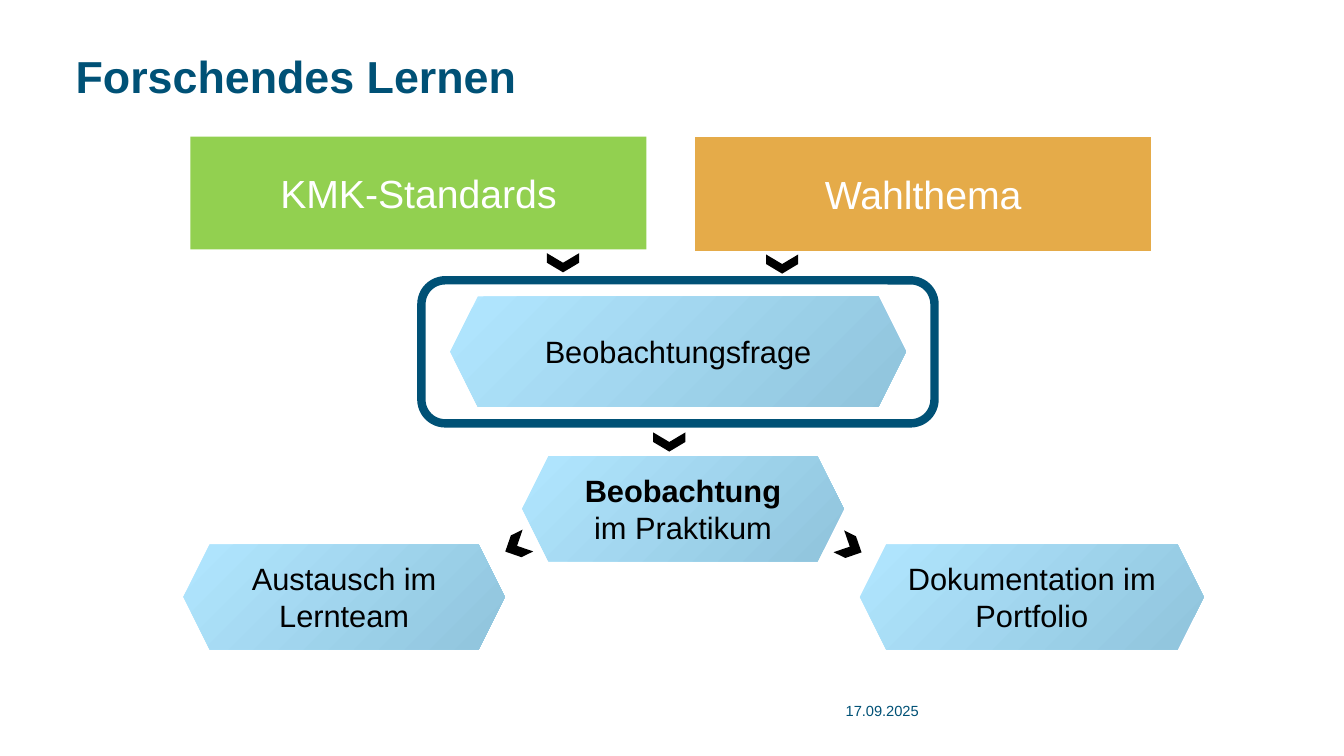
from dataclasses import dataclass

import pptx
import pptx.dml.color
import pptx.enum.shapes
import pptx.enum.text
import pptx.util

Pt = pptx.util.Pt
RGB = pptx.dml.color.RGBColor
Kind = pptx.enum.shapes.MSO_SHAPE
Align = pptx.enum.text.PP_ALIGN
Anchor = pptx.enum.text.MSO_ANCHOR

NAVY = RGB(0x00, 0x51, 0x76)
GREEN = RGB(0x92, 0xD0, 0x50)
AMBER = RGB(0xE5, 0xAB, 0x49)
LIGHT = RGB(0xB1, 0xE6, 0xFF)
STEEL = RGB(0x90, 0xC4, 0xDC)
BLACK = RGB(0, 0, 0)
WHITE = RGB(255, 255, 255)


@dataclass
class Box:
    left: float
    top: float
    width: float
    height: float


@dataclass
class Label:
    box: Box
    text: str
    size: float
    anchor: Anchor
    bold: bool = False
    space: float = 1.0


@dataclass
class Topic:
    box: Box
    text: str
    color: RGB


@dataclass
class Step:
    box: Box
    text: str
    lead: str = ""


@dataclass
class Arrow:
    box: Box
    turn: float


LABELS = [
    Label(Box(54, 38.9, 862.6, 45.4), "Forschendes Lernen", 32, Anchor.TOP, True, 0.9),
    Label(Box(604.1, 498.2, 96.5, 19.4), "17.09.2025", 10.5, Anchor.MIDDLE),
]
TOPICS = [
    Topic(Box(136.1, 97.5, 325.6, 80.6), "KMK-Standards", GREEN),
    Topic(Box(496.6, 98, 325.6, 81.2), "Wahlthema", AMBER),
]
STEPS = [
    Step(Box(321.6, 211.8, 325.6, 78.8), "Beobachtungsfrage"),
    Step(Box(373, 325.8, 229.7, 75.2), " im Praktikum", "Beobachtung"),
    Step(Box(614.3, 388.8, 245.6, 75.2), "Dokumentation im Portfolio"),
    Step(Box(131, 388.8, 229.7, 75.2), "Austausch im Lernteam"),
]
ARROWS = [
    Arrow(Box(471.2, 304.2, 13.7, 23), 90),
    Arrow(Box(551.8, 177.1, 13.7, 23), 90),
    Arrow(Box(395.3, 176.2, 13.7, 23), 90),
    Arrow(Box(360, 381.4, 18, 17.3), 154),
    Arrow(Box(598.3, 382, 18, 17.3), 26),
]
FRAME = Box(301, 200.2, 366.5, 102.2)


def place(box: Box) -> list:
    return [Pt(n) for n in (box.left, box.top, box.width, box.height)]


def style(item, form: dict) -> None:
    for name, value in form.items():
        setattr(item, name, value)


def write(para, text: str, size: float, color: RGB, bold: bool = False) -> None:
    run = para.add_run()
    run.text = text
    style(run.font, {"name": "Arial", "size": Pt(size), "bold": bold})
    run.font.color.rgb = color


def shape(slide, kind: Kind, box: Box):
    item = slide.shapes.add_shape(kind, *place(box))
    item.shadow.inherit = False
    item.line.fill.background()
    style(item.text_frame, {"word_wrap": True, "vertical_anchor": Anchor.MIDDLE})
    item.text_frame.paragraphs[0].alignment = Align.CENTER
    return item


def paint(item, color: RGB) -> None:
    item.fill.solid()
    item.fill.fore_color.rgb = color


def label(slide, part: Label) -> None:
    frame = slide.shapes.add_textbox(*place(part.box)).text_frame
    sides = ("left", "top", "right", "bottom")
    style(frame, {f"margin_{side}": 0 for side in sides})
    style(frame, {"word_wrap": True, "vertical_anchor": part.anchor})
    para = frame.paragraphs[0]
    para.line_spacing = part.space
    write(para, part.text, part.size, NAVY, part.bold)


def topic(slide, part: Topic) -> None:
    item = shape(slide, Kind.RECTANGLE, part.box)
    paint(item, part.color)
    write(item.text_frame.paragraphs[0], part.text, 28, WHITE)


def step(slide, part: Step) -> None:
    item = shape(slide, Kind.HEXAGON, part.box)
    item.adjustments[0] = 0.25
    item.fill.gradient()
    item.fill.gradient_angle = 315
    for stop, color in zip(item.fill.gradient_stops, (LIGHT, STEEL)):
        stop.color.rgb = color
    for stop, spot in zip(item.fill.gradient_stops, (0, 1)):
        stop.position = spot
    para = item.text_frame.paragraphs[0]
    if part.lead:
        write(para, part.lead, 22, BLACK, True)
    write(para, part.text, 22, BLACK)


def arrow(slide, part: Arrow) -> None:
    item = shape(slide, Kind.CHEVRON, part.box)
    item.rotation = part.turn
    paint(item, BLACK)


def frame(slide, box: Box) -> None:
    item = shape(slide, Kind.ROUNDED_RECTANGLE, box)
    item.fill.background()
    item.line.color.rgb = NAVY
    item.line.width = Pt(6)


def main() -> None:
    deck = pptx.Presentation()
    style(deck, {"slide_width": Pt(960), "slide_height": Pt(540)})
    slide = deck.slides.add_slide(deck.slide_layouts[6])
    for draw, parts in (
        (label, LABELS),
        (topic, TOPICS),
        (step, STEPS),
        (arrow, ARROWS),
        (frame, [FRAME]),
    ):
        for part in parts:
            draw(slide, part)
    deck.save("out.pptx")


if __name__ == "__main__":
    main()
